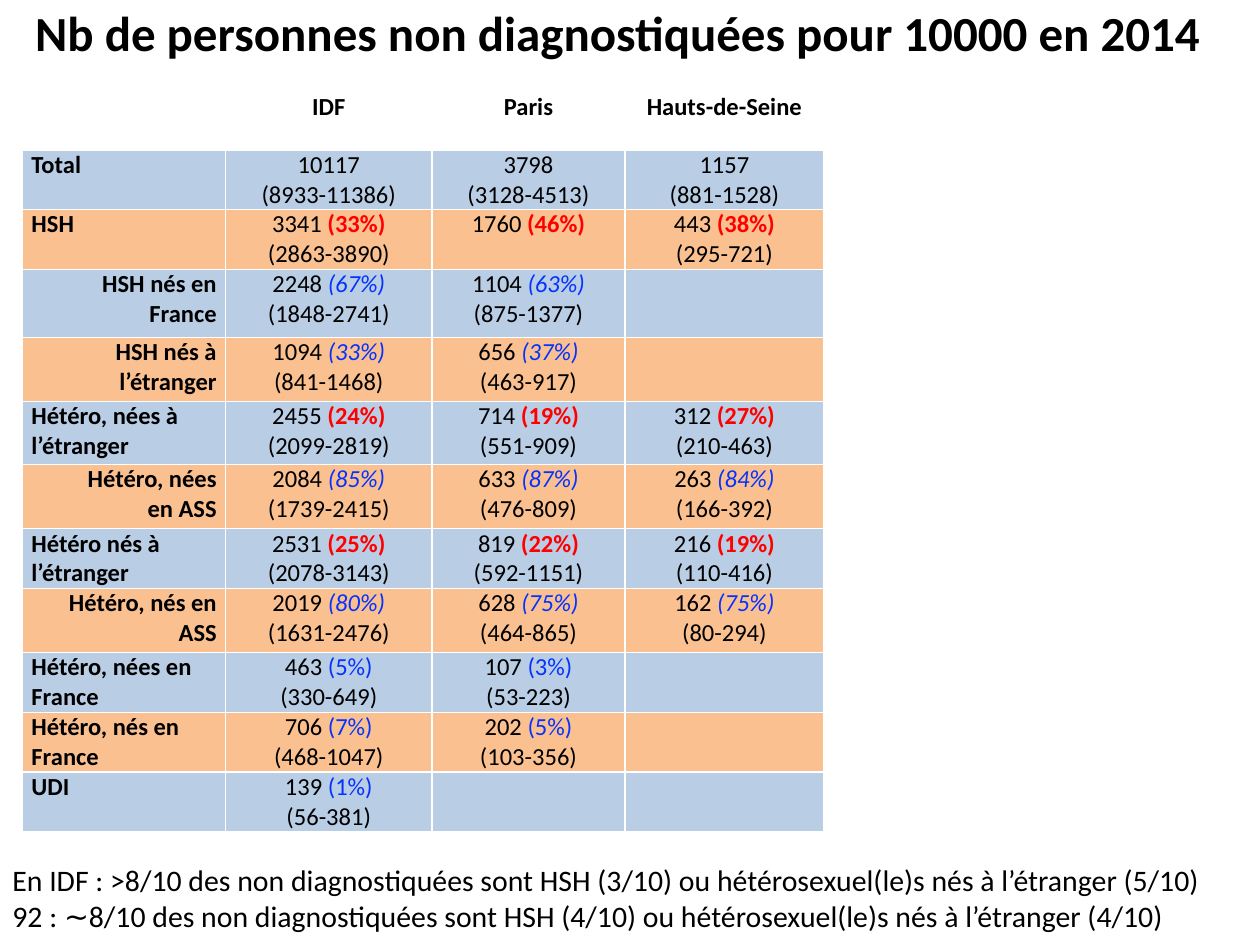
from dataclasses import dataclass
from typing import Optional

import pptx
import pptx.dml.color
import pptx.enum.text
import pptx.util

RGBColor = pptx.dml.color.RGBColor
Align = pptx.enum.text.PP_ALIGN
Anchor = pptx.enum.text.MSO_ANCHOR
AutoSize = pptx.enum.text.MSO_AUTO_SIZE
Inches = pptx.util.Inches

BLACK = RGBColor(0x00, 0x00, 0x00)
RED = RGBColor(0xFF, 0x00, 0x00)
BLUE = RGBColor(0x04, 0x32, 0xFF)
BAND_FILLS = (RGBColor(0xB9, 0xCD, 0xE5), RGBColor(0xFA, 0xC0, 0x90))

SLIDE_WIDTH, SLIDE_HEIGHT = 10, 7.5
COLUMN_WIDTHS = (1.61, 1.64, 1.53, 1.58)
ROW_HEIGHTS = (0.46, 0.46, 0.46, 0.54, 0.51, 0.5, 0.51, 0.46, 0.51, 0.46, 0.46, 0.46)
HEADINGS = ("", "IDF", "Paris", "Hauts-de-Seine")
LABEL_INSET, SUBGROUP_INSET, VALUE_INSET = 0.07, 0.3, 0.06


@dataclass(frozen=True)
class Emphasis:
    color: RGBColor
    bold: bool = False
    italic: bool = False


GROUP = Emphasis(RED, bold=True)
SUBGROUP = Emphasis(BLUE, italic=True)
MINOR = Emphasis(BLUE)


@dataclass(frozen=True)
class Estimate:
    count: str
    share: str = ""
    interval: str = ""


@dataclass(frozen=True)
class Population:
    label: str
    emphasis: Emphasis
    estimates: tuple[Estimate, ...]
    align: Optional[Align] = None


POPULATIONS = (
    Population("Total", GROUP, (
        Estimate("10117", interval="(8933-11386)"),
        Estimate("3798", interval="(3128-4513)"),
        Estimate("1157", interval="(881-1528)")), Align.JUSTIFY),
    Population("HSH", GROUP, (
        Estimate("3341", "(33%)", "(2863-3890)"),
        Estimate("1760", "(46%)"),
        Estimate("443", "(38%)", "(295-721)"))),
    Population("HSH nés en France", SUBGROUP, (
        Estimate("2248", "(67%)", "(1848-2741)"),
        Estimate("1104", "(63%)", "(875-1377)")), Align.RIGHT),
    Population("HSH nés à l’étranger", SUBGROUP, (
        Estimate("1094", "(33%)", "(841-1468)"),
        Estimate("656", "(37%)", "(463-917)")), Align.RIGHT),
    Population("Hétéro, nées à l’étranger", GROUP, (
        Estimate("2455", "(24%)", "(2099-2819)"),
        Estimate("714", "(19%)", "(551-909)"),
        Estimate("312", "(27%)", "(210-463)"))),
    Population("Hétéro, nées en ASS", SUBGROUP, (
        Estimate("2084", "(85%)", "(1739-2415)"),
        Estimate("633", "(87%)", "(476-809)"),
        Estimate("263", "(84%)", "(166-392)")), Align.RIGHT),
    Population("Hétéro nés à l’étranger", GROUP, (
        Estimate("2531", "(25%)", "(2078-3143)"),
        Estimate("819", "(22%)", "(592-1151)"),
        Estimate("216", "(19%)", "(110-416)"))),
    Population("Hétéro, nés en ASS", SUBGROUP, (
        Estimate("2019", "(80%)", "(1631-2476)"),
        Estimate("628", "(75%)", "(464-865)"),
        Estimate("162", "(75%)", "(80-294)")), Align.RIGHT),
    Population("Hétéro, nées en France", MINOR, (
        Estimate("463", "(5%)", "(330-649)"),
        Estimate("107", "(3%)", "(53-223)"))),
    Population("Hétéro, nés en France", MINOR, (
        Estimate("706", "(7%)", "(468-1047)"),
        Estimate("202", "(5%)", "(103-356)"))),
    Population("UDI", MINOR, (Estimate("139", "(1%)", "(56-381)"),)),
)
CONCLUSIONS = (
    "En IDF : >8/10 des non diagnostiquées sont HSH (3/10) ou hétérosexuel(le)s nés à l’étranger (5/10)",
    "92 : ∼8/10 des non diagnostiquées sont HSH (4/10) ou hétérosexuel(le)s nés à l’étranger (4/10)",
)


def write(para, text: str, *, size: float = 14, color: RGBColor = BLACK,
          bold: bool = False, italic: bool = False, align: Optional[Align] = None) -> None:
    """Append one formatted span to a paragraph."""
    span = para.add_run()
    span.text = text
    span.font.name = "Calibri"
    span.font.size = pptx.util.Pt(size)
    span.font.color.rgb = color
    span.font.bold = bold
    span.font.italic = italic
    if align is not None:
        para.alignment = align


def set_insets(cell, left: float, right: float) -> None:
    cell.margin_left, cell.margin_right = Inches(left), Inches(right)
    cell.margin_top = cell.margin_bottom = 0


def fill_heading(cell, text: str) -> None:
    cell.fill.background()
    set_insets(cell, VALUE_INSET, VALUE_INSET)
    if text:
        write(cell.text_frame.paragraphs[0], text, bold=True, align=Align.CENTER)


def fill_label(cell, population: Population) -> None:
    left = SUBGROUP_INSET if population.align == Align.RIGHT else LABEL_INSET
    set_insets(cell, left, LABEL_INSET)
    write(cell.text_frame.paragraphs[0], population.label, bold=True, align=population.align)


def fill_estimate(cell, estimate: Estimate, emphasis: Emphasis) -> None:
    """Show count and share on one line, the interval below."""
    set_insets(cell, VALUE_INSET, VALUE_INSET)
    para = cell.text_frame.paragraphs[0]
    if estimate.share:
        write(para, f"{estimate.count} ", align=Align.CENTER)
        write(para, estimate.share, color=emphasis.color, bold=emphasis.bold,
              italic=emphasis.italic)
    else:
        write(para, estimate.count, align=Align.CENTER)
    if estimate.interval:
        write(cell.text_frame.add_paragraph(), estimate.interval, align=Align.CENTER)


def add_estimates_table(page) -> None:
    table = page.shapes.add_table(
        len(ROW_HEIGHTS), len(COLUMN_WIDTHS), Inches(0.18), Inches(0.73),
        Inches(sum(COLUMN_WIDTHS)), Inches(sum(ROW_HEIGHTS))).table
    for column, width in zip(table.columns, COLUMN_WIDTHS):
        column.width = Inches(width)
    for row, height in zip(table.rows, ROW_HEIGHTS):
        row.height = Inches(height)
    for index, heading in enumerate(HEADINGS):
        fill_heading(table.cell(0, index), heading)
    for index, population in enumerate(POPULATIONS):
        cells = list(table.rows[index + 1].cells)
        for cell in cells:
            cell.fill.solid()
            cell.fill.fore_color.rgb = BAND_FILLS[index % 2]
        fill_label(cells[0], population)
        for cell, estimate in zip(cells[1:], population.estimates):
            fill_estimate(cell, estimate, population.emphasis)


def add_text_box(page, left: float, top: float, width: float, height: float,
                 lines: tuple[str, ...], *, wrap: bool, anchor: Anchor, **style) -> None:
    box = page.shapes.add_textbox(Inches(left), Inches(top), Inches(width), Inches(height))
    frame = box.text_frame
    frame.word_wrap = wrap
    frame.vertical_anchor = anchor
    frame.auto_size = AutoSize.NONE if wrap else AutoSize.SHAPE_TO_FIT_TEXT
    for index, line in enumerate(lines):
        para = frame.add_paragraph() if index else frame.paragraphs[0]
        write(para, line, **style)


def main() -> None:
    deck = pptx.Presentation()
    deck.slide_width, deck.slide_height = Inches(SLIDE_WIDTH), Inches(SLIDE_HEIGHT)
    page = deck.slides.add_slide(deck.slide_layouts[6])
    add_text_box(page, -0.08, -0.23, 9.96, 0.97,
                 ("Nb de personnes non diagnostiquées pour 10000 en 2014",),
                 wrap=True, anchor=Anchor.MIDDLE, size=28, bold=True, align=Align.CENTER)
    add_estimates_table(page)
    add_text_box(page, 0, 6.79, 9.76, 0.67, CONCLUSIONS,
                 wrap=False, anchor=Anchor.TOP, size=17)
    deck.save("out.pptx")


if __name__ == "__main__":
    main()
